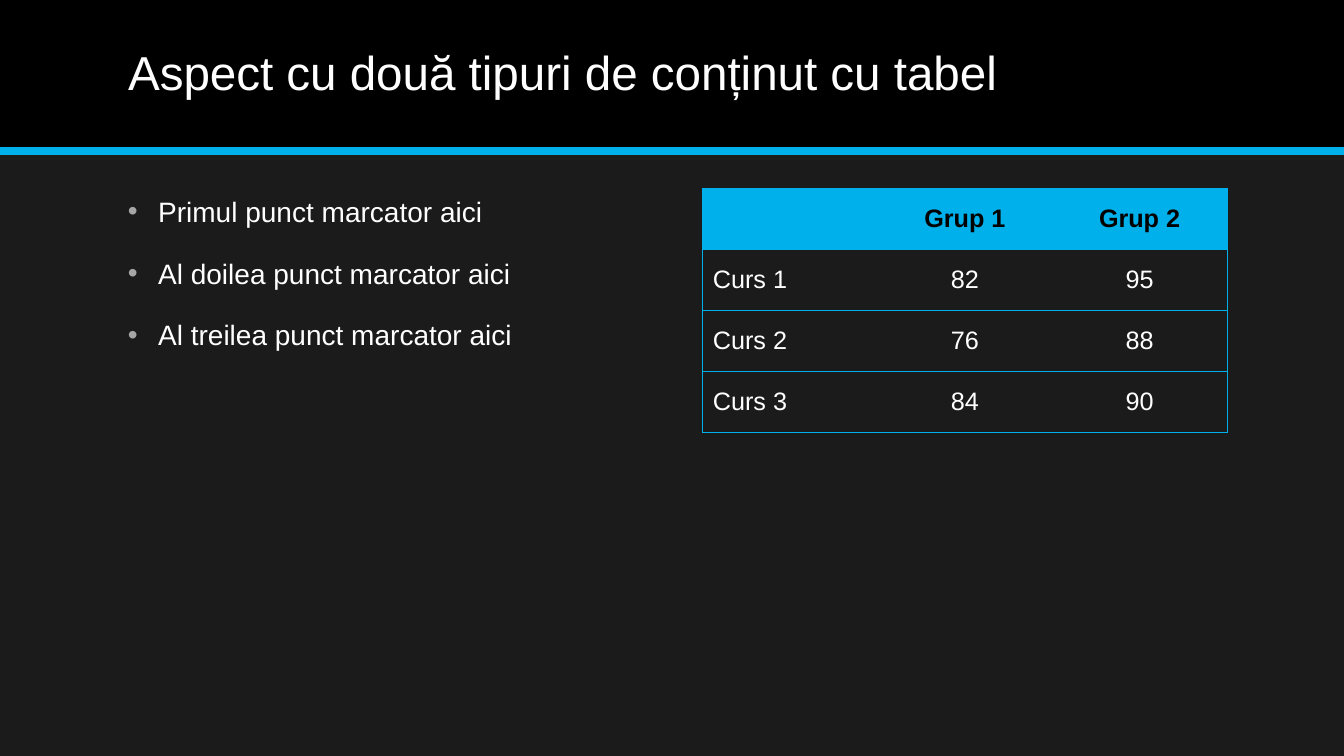
from lxml import etree
from pptx import Presentation
from pptx.dml.color import RGBColor
from pptx.enum import shapes, text
from pptx.oxml.ns import qn
from pptx.util import Inches, Pt

TITLE = "Aspect cu două tipuri de conținut cu tabel"
POINTS = [
    "Primul punct marcator aici",
    "Al doilea punct marcator aici",
    "Al treilea punct marcator aici",
]
SCORES = [
    ("", "Grup 1", "Grup 2"),
    ("Curs 1", "82", "95"),
    ("Curs 2", "76", "88"),
    ("Curs 3", "84", "90"),
]
COLORS = {
    "background": "1B1B1B",
    "band": "000000",
    "accent": "00B0EA",
    "text": "FFFFFF",
    "bullet": "A6A6A6",
}
FONT = "Arial"
NO_STYLE = "{2D5ABB26-0587-4C30-8999-92F81FD0307C}"
WIDTH, HEIGHT, BAND_HEIGHT = Inches(13.33), Inches(7.5), Inches(1.5)
LEFT, COLUMN_WIDTH = Inches(1.17), Inches(5.2)


def rgb(name):
    return RGBColor.from_string(COLORS[name])


def set_font(paragraph, size, color="text", bold=False):
    font = paragraph.font
    font.name, font.size, font.bold = FONT, Pt(size), bold
    font.color.rgb = rgb(color)


def add_bullet(paragraph):
    props = paragraph._p.get_or_add_pPr()
    props.set("marL", str(Inches(0.3)))
    props.set("indent", str(-Inches(0.3)))
    tint = etree.SubElement(props, qn("a:buClr"))
    etree.SubElement(tint, qn("a:srgbClr"), val=COLORS["bullet"])
    etree.SubElement(props, qn("a:buFont"), typeface=FONT)
    etree.SubElement(props, qn("a:buChar"), char="•")


def add_borders(cell, sides):
    props = cell._tc.get_or_add_tcPr()
    for side in sides:
        line = etree.SubElement(props, qn(f"a:ln{side}"), w=str(Pt(0.5)))
        fill = etree.SubElement(line, qn("a:solidFill"))
        etree.SubElement(fill, qn("a:srgbClr"), val=COLORS["accent"])


def add_header(slide):
    band = slide.shapes.add_shape(
        shapes.MSO_SHAPE.RECTANGLE, 0, 0, WIDTH, BAND_HEIGHT)
    band.shadow.inherit = False
    band.fill.solid()
    band.fill.fore_color.rgb = rgb("band")
    band.line.fill.background()

    rule = slide.shapes.add_connector(
        shapes.MSO_CONNECTOR.STRAIGHT, 0, BAND_HEIGHT, WIDTH, BAND_HEIGHT)
    rule.line.color.rgb = rgb("accent")
    rule.line.width = Pt(6)
    etree.SubElement(rule._element.spPr, qn("a:effectLst"))

    title = slide.shapes.title
    title._element.addprevious(band._element)
    title._element.addprevious(rule._element)
    title.left, title.top = LEFT, Inches(0.14)
    title.width, title.height = Inches(11), Inches(1.2)
    title.text_frame.text = TITLE
    title.text_frame.vertical_anchor = text.MSO_ANCHOR.MIDDLE
    heading = title.text_frame.paragraphs[0]
    heading.alignment = text.PP_ALIGN.LEFT
    heading.line_spacing = 0.9
    set_font(heading, 34)


def add_points(slide):
    frame = slide.shapes.add_textbox(
        LEFT, Inches(1.88), COLUMN_WIDTH, Inches(4.88)).text_frame
    frame.word_wrap = True
    for i, point in enumerate(POINTS):
        paragraph = frame.add_paragraph() if i else frame.paragraphs[0]
        paragraph.text = point
        add_bullet(paragraph)
        paragraph.space_before = Pt(20 if i else 0)
        set_font(paragraph, 20)


def add_scores(slide):
    rows, cols = len(SCORES), len(SCORES[0])
    table = slide.shapes.add_table(
        rows, cols, Inches(6.97), Inches(1.87), COLUMN_WIDTH, Inches(2.42)).table
    table._tbl.tblPr.find(qn("a:tableStyleId")).text = NO_STYLE
    table.horz_banding = False
    for r, values in enumerate(SCORES):
        for c, value in enumerate(values):
            cell = table.cell(r, c)
            cell.text = value
            cell.vertical_anchor = text.MSO_ANCHOR.MIDDLE
            left = "L" if c == 0 else ""
            right = "R" if c == cols - 1 else ""
            add_borders(cell, left + right + "TB")
            paragraph = cell.text_frame.paragraphs[0]
            paragraph.alignment = text.PP_ALIGN.CENTER if c else text.PP_ALIGN.LEFT
            if r == 0:
                cell.fill.solid()
                cell.fill.fore_color.rgb = rgb("accent")
                set_font(paragraph, 18, "band", True)
            else:
                cell.fill.background()
                set_font(paragraph, 18)


def main():
    deck = Presentation()
    deck.slide_width, deck.slide_height = WIDTH, HEIGHT
    slide = deck.slides.add_slide(deck.slide_layouts[5])
    slide.background.fill.solid()
    slide.background.fill.fore_color.rgb = rgb("background")
    add_header(slide)
    add_points(slide)
    add_scores(slide)
    deck.save("out.pptx")


if __name__ == "__main__":
    main()
